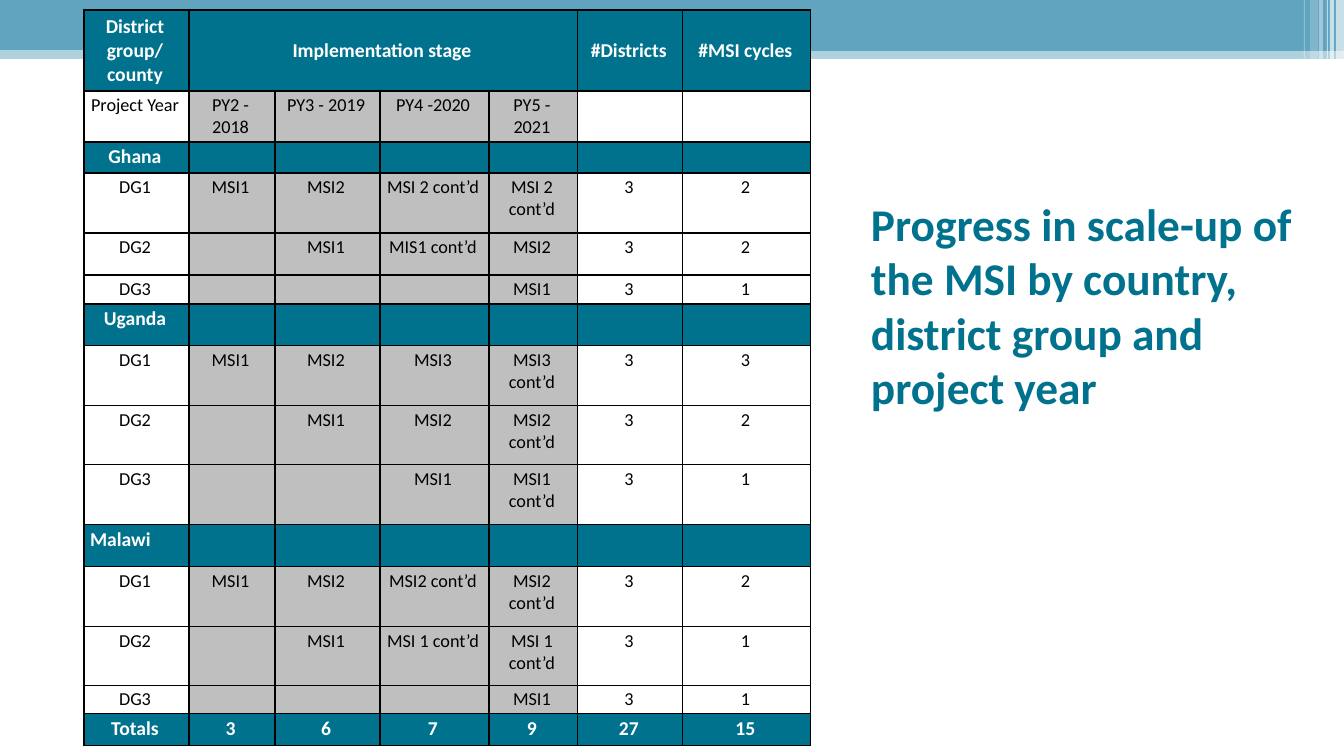
from pptx import Presentation, util as u
from pptx.dml.color import RGBColor
from pptx.enum import shapes, text
from pptx.oxml import parse_xml
from pptx.oxml.ns import nsdecls, qn
from lxml import etree

PX = 914400 / 100.8
TEAL = RGBColor(0x01, 0x72, 0x8D)
BLUE = RGBColor(0x61, 0xA4, 0xBF)
GREY = RGBColor(0xBF, 0xBF, 0xBF)
WHITE = RGBColor(0xFF, 0xFF, 0xFF)
BLACK = RGBColor(0, 0, 0)

BANDS = [(0, 50, 1344, 9, 50), (0, 0, 1344, 34, 100),
         (0, 34, 1344, 16, 100), (794, 41, 549, 10, 100)]
STRIPES = [(1336, 8, 65), (1330, 4, 65), (1327, 1, 60),
           (1319, 4, 40), (1310, 8, 20), (1304, 1, 30)]
COLS = [105, 86, 105, 109, 89, 105, 128]
ROWS = [81, 51, 31, 60, 42, 29, 42, 60, 59, 60, 42, 60, 59, 28, 32]
CELLS = [
    ["District group/\vcounty", "Implementation stage", "", "", "",
     "#Districts", "#MSI cycles"],
    ["Project Year", "PY2 - 2018", "PY3 - 2019", "PY4 -2020", "PY5 - 2021", "", ""],
    ["Ghana"] + [""] * 6,
    ["DG1", "MSI1", "MSI2", "MSI 2 cont’d", "MSI 2 cont’d", "3", "2"],
    ["DG2", "", "MSI1", "MIS1 cont’d", "MSI2", "3", "2"],
    ["DG3", "", "", "", "MSI1", "3", "1"],
    ["Uganda"] + [""] * 6,
    ["DG1", "MSI1", "MSI2", "MSI3", "MSI3 cont’d", "3", "3"],
    ["DG2", "", "MSI1", "MSI2", "MSI2 cont’d", "3", "2"],
    ["DG3", "", "", "MSI1", "MSI1 cont’d", "3", "1"],
    ["Malawi"] + [""] * 6,
    ["DG1", "MSI1", "MSI2", "MSI2 cont’d", "MSI2 cont’d", "3", "2"],
    ["DG2", "", "MSI1", "MSI 1 cont’d", "MSI 1 cont’d", "3", "1"],
    ["DG3", "", "", "", "MSI1", "3", "1"],
    ["Totals", "3", "6", "7", "9", "27", "15"],
]
HEADS = {0, 2, 6, 10, 14}


def px(n):
    """Turn pixels into EMU."""
    return u.Emu(round(n * PX))


def style(para, size, color, bold):
    """Set the font of a paragraph."""
    font = para.font
    font.name, font.size, font.bold = "Calibri", u.Pt(size), bold
    font.color.rgb = color


def bar(slide, x, y, w, h, color, alpha):
    """Draw a plain bar with the given opacity in percent."""
    box = slide.shapes.add_shape(shapes.MSO_SHAPE.RECTANGLE, px(x), px(y), px(w), px(h))
    box.shadow.inherit = False
    box.line.fill.background()
    box.fill.solid()
    box.fill.fore_color.rgb = color
    if alpha < 100:
        tint = box.fill._xPr.find(qn("a:solidFill"))[0]
        etree.SubElement(tint, qn("a:alpha")).set("val", str(alpha * 1000))


def banner(slide, x, y, h):
    """Draw the top band and its stripes."""
    for left, top, wide, high, alpha in BANDS:
        bar(slide, x + left, y + top, wide, high, BLUE, alpha)
    for left, wide, alpha in STRIPES:
        bar(slide, x + left, y, wide, h, WHITE, alpha)


def title(slide, x, y, w, h):
    """Place the slide title."""
    frame = slide.shapes.add_textbox(px(x), px(y), px(w), px(h)).text_frame
    frame.word_wrap = True
    frame.vertical_anchor = text.MSO_ANCHOR.MIDDLE
    frame.margin_left = frame.margin_right = px(9)
    frame.margin_top = frame.margin_bottom = 0
    para = frame.paragraphs[0]
    para.text = "Progress in scale-up of the MSI by country, \vdistrict group and \vproject year"
    style(para, 32.4, TEAL, True)


def edge(cell):
    """Give a cell thin black borders."""
    props = cell._tc.get_or_add_tcPr()
    for side in ("lnL", "lnR", "lnT", "lnB"):
        props.append(parse_xml(
            f'<a:{side} {nsdecls("a")} w="12700"><a:solidFill>'
            f'<a:srgbClr val="{BLACK}"/></a:solidFill></a:{side}>'))


def fill(cell, words, row, col):
    """Write and paint one cell by its place in the grid."""
    head = row in HEADS
    cell.margin_left, cell.margin_right = px(6), px(9)
    cell.margin_top = cell.margin_bottom = px(3)
    cell.vertical_anchor = text.MSO_ANCHOR.TOP if row else text.MSO_ANCHOR.MIDDLE
    edge(cell)
    cell.fill.solid()
    cell.fill.fore_color.rgb = TEAL if head else GREY if 1 <= col <= 4 else WHITE
    cell.text = words
    para = cell.text_frame.paragraphs[0]
    para.alignment = text.PP_ALIGN.LEFT if words == "Malawi" else text.PP_ALIGN.CENTER
    style(para, 14 if head else 13, WHITE if head else BLACK, head)


def grid(slide, x, y):
    """Build the table of stages by country and district group."""
    table = slide.shapes.add_table(len(ROWS), len(COLS), px(x), px(y),
                                   px(sum(COLS)), px(sum(ROWS))).table
    for col, wide in zip(table.columns, COLS):
        col.width = px(wide)
    for row, high in zip(table.rows, ROWS):
        row.height = px(high)
    for r, line in enumerate(CELLS):
        for c, words in enumerate(line):
            fill(table.cell(r, c), words, r, c)
    table.cell(0, 1).merge(table.cell(0, 4))


def main():
    """Build and save the slide."""
    deck = Presentation()
    deck.slide_width, deck.slide_height = px(1344), px(756)
    slide = deck.slides.add_slide(deck.slide_layouts[6])
    banner(slide, 0, 0, 60)
    title(slide, 862, 196, 446, 218)
    grid(slide, 84, 10)
    deck.save("out.pptx")


if __name__ == "__main__":
    main()
